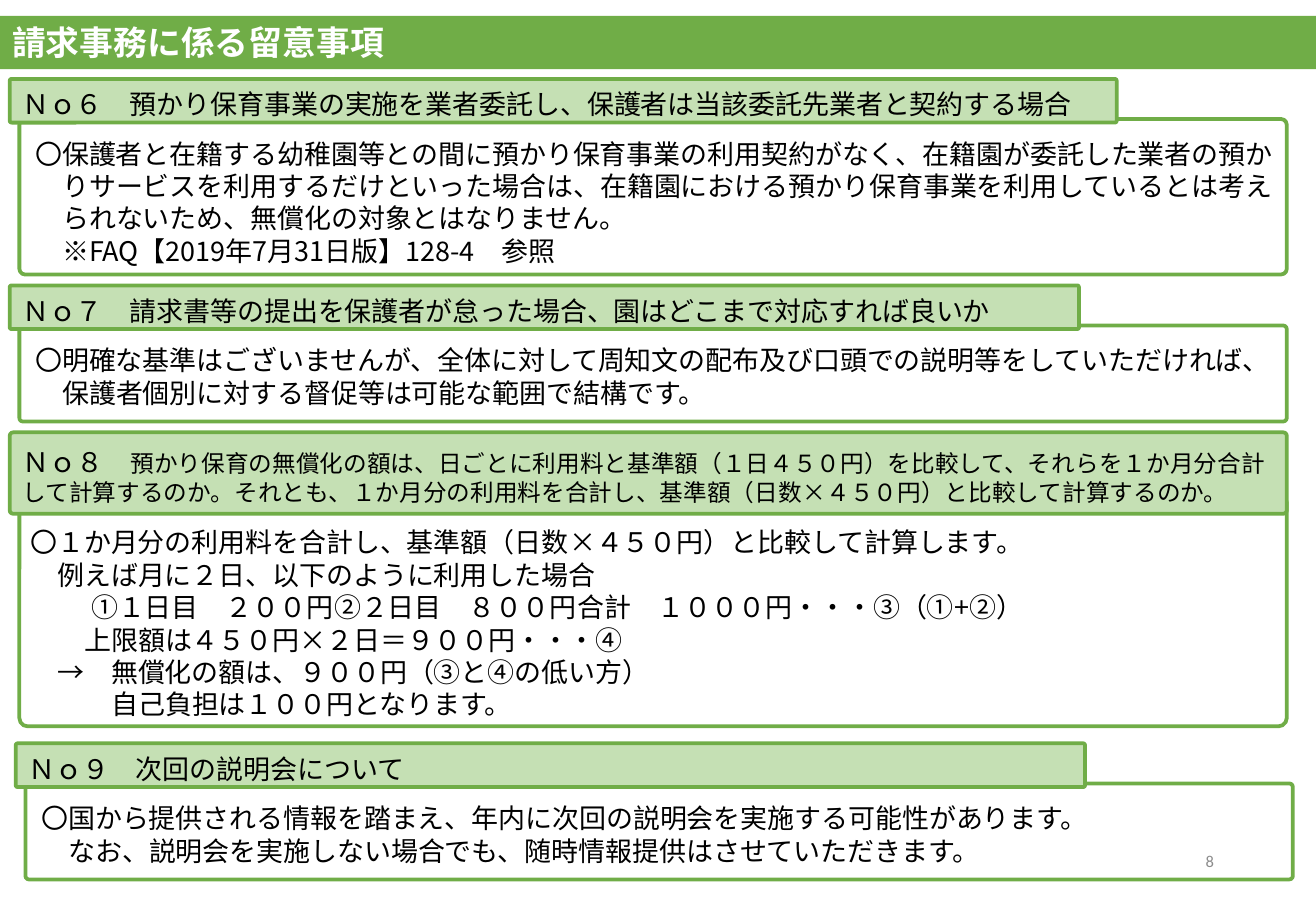
from dataclasses import dataclass

from lxml.etree import SubElement
from pptx import Presentation
from pptx.dml.color import RGBColor
from pptx.enum.shapes import MSO_SHAPE
from pptx.enum.text import MSO_ANCHOR, MSO_AUTO_SIZE, PP_ALIGN
from pptx.oxml.ns import qn
from pptx.util import Inches, Pt

GREEN = RGBColor(0x70, 0xAD, 0x47)
PALE_GREEN = RGBColor(0xC5, 0xE0, 0xB4)
BLACK = RGBColor(0, 0, 0)
WHITE = RGBColor(0xFF, 0xFF, 0xFF)
GREY = RGBColor(0x8C, 0x8C, 0x8C)
JAPANESE_FONT = "Noto Sans CJK JP"
BODY_SIZE = 16
LINE_HEIGHT = 0.27
USAGE_TABS = (0.44, 3.54, 6.2)  # day 1, day 2 and total


@dataclass(frozen=True)
class Line:
    text: str
    indent: int = 0  # in full-width characters
    tabs: tuple[float, ...] = ()


@dataclass(frozen=True)
class Section:
    number: str
    question: str
    left: float
    top: float
    header_width: float
    frame_height: float
    answer: tuple[Line, ...]
    header_height: float = 0.36
    question_size: float = BODY_SIZE
    overlap: float = 0.03
    answer_shift: float = 0.03
    answer_drop: float = 0.1


SECTIONS = (
    Section("Ｎｏ６", "預かり保育事業の実施を業者委託し、保護者は当該委託先業者と契約する場合",
            0.08, 0.65, 9.11, 1.28, (
                Line("〇保護者と在籍する幼稚園等との間に預かり保育事業の利用契約がなく、在籍園が委託した業者の預か"),
                Line("りサービスを利用するだけといった場合は、在籍園における預かり保育事業を利用しているとは考え", 1),
                Line("られないため、無償化の対象とはなりません。", 1),
                Line("※FAQ【2019年7月31日版】128-4　参照", 1))),
    Section("Ｎｏ７", "請求書等の提出を保護者が怠った場合、園はどこまで対応すれば良いか",
            0.08, 2.35, 8.8, 0.79, (
                Line("〇明確な基準はございませんが、全体に対して周知文の配布及び口頭での説明等をしていただければ、"),
                Line("保護者個別に対する督促等は可能な範囲で結構です。", 1))),
    Section("Ｎｏ８", "預かり保育の無償化の額は、日ごとに利用料と基準額（１日４５０円）を比較して、"
            "それらを１か月分合計して計算するのか。それとも、１か月分の利用料を合計し、"
            "基準額（日数×４５０円）と比較して計算するのか。",
            0.08, 3.56, 10.51, 1.91, (
                Line("〇１か月分の利用料を合計し、基準額（日数×４５０円）と比較して計算します。"),
                Line("例えば月に２日、以下のように利用した場合", 1),
                Line("\t①１日目　２００円\t②２日目　８００円\t合計　１０００円・・・③（①+②）",
                     tabs=USAGE_TABS),
                Line("上限額は４５０円×２日＝９００円・・・④", 2),
                Line("→　無償化の額は、９００円（③と④の低い方）", 1),
                Line("自己負担は１００円となります。", 3)),
            header_height=0.67, question_size=14, overlap=0.16,
            answer_shift=-0.01, answer_drop=0.21),
    Section("Ｎｏ９", "次回の説明会について", 0.13, 6.12, 8.8, 0.79, (
        Line("〇国から提供される情報を踏まえ、年内に次回の説明会を実施する可能性があります。"),
        Line("なお、説明会を実施しない場合でも、随時情報提供はさせていただきます。", 1))),
)


def write(paragraph, text: str, *, size: float = BODY_SIZE, color: RGBColor = BLACK,
          bold: bool = False, font: str = JAPANESE_FONT, align=PP_ALIGN.LEFT) -> None:
    paragraph.alignment = align
    run = paragraph.add_run()
    run.text = text
    run.font.size, run.font.bold, run.font.name = Pt(size), bold, font
    run.font.color.rgb = color
    SubElement(run.font._element, qn("a:ea"), typeface=font)


def place(shape, left: float, top: float, width: float, height: float) -> None:
    shape.left, shape.top = Inches(left), Inches(top)
    shape.width, shape.height = Inches(width), Inches(height)


def prepare_frame(shape, anchor):
    frame = shape.text_frame
    frame.word_wrap = True
    frame.auto_size = MSO_AUTO_SIZE.NONE
    frame.vertical_anchor = anchor
    return frame


def add_panel(slide, left: float, top: float, width: float, height: float,
              rounding: float, fill: RGBColor | None = None):
    panel = slide.shapes.add_shape(MSO_SHAPE.ROUNDED_RECTANGLE, Inches(left), Inches(top),
                                   Inches(width), Inches(height))
    panel.adjustments[0] = rounding
    panel.shadow.inherit = False
    panel.line.color.rgb, panel.line.width = GREEN, Pt(2.25)
    if fill is None:
        panel.fill.background()
    else:
        panel.fill.solid()
        panel.fill.fore_color.rgb = fill
    return panel


def write_answer(body, lines: tuple[Line, ...]) -> None:
    frame = prepare_frame(body, MSO_ANCHOR.TOP)
    for index, line in enumerate(lines):
        paragraph = frame.paragraphs[0] if index == 0 else frame.add_paragraph()
        paragraph.space_before = paragraph.space_after = Pt(0)
        paragraph.line_spacing = 1.0
        write(paragraph, line.text)
        # Plain lines without bullets, indented by whole characters
        properties = paragraph._p.get_or_add_pPr()
        properties.set("marL", str(Pt(BODY_SIZE * line.indent)))
        properties.set("indent", "0")
        SubElement(properties, qn("a:buNone"))
        if line.tabs:
            tab_list = SubElement(properties, qn("a:tabLst"))
            for position in line.tabs:
                SubElement(tab_list, qn("a:tab"), pos=str(Inches(position)), algn="l")


def add_section(slide, section: Section, body) -> None:
    frame_left = section.left + 0.08
    frame_top = section.top + section.header_height - section.overlap
    add_panel(slide, frame_left, frame_top, 10.43, section.frame_height, 0.036)

    header = add_panel(slide, section.left, section.top, section.header_width,
                       section.header_height, 0.042, PALE_GREEN)
    frame = prepare_frame(header, MSO_ANCHOR.MIDDLE)
    frame.margin_top, frame.margin_bottom = Inches(0.1), Inches(0.05)
    heading = frame.paragraphs[0]
    write(heading, section.number + "　")
    write(heading, section.question, size=section.question_size)

    place(body, frame_left + section.answer_shift, frame_top + section.answer_drop,
          10.54, 0.1 + LINE_HEIGHT * len(section.answer))
    write_answer(body, section.answer)


def main() -> None:
    presentation = Presentation()
    presentation.slide_width, presentation.slide_height = Inches(10.83), Inches(7.5)
    # The comparison layout offers a title and four bodies
    slide = presentation.slides.add_slide(presentation.slide_layouts[4])

    # Title bar
    title = slide.shapes.title
    place(title, 0, 0.13, 10.83, 0.44)
    title.fill.solid()
    title.fill.fore_color.rgb = GREEN
    write(prepare_frame(title, MSO_ANCHOR.MIDDLE).paragraphs[0],
          "請求事務に係る留意事項", size=20, color=WHITE, bold=True)

    # Questions and answers
    bodies = [holder for holder in slide.placeholders if holder.placeholder_format.idx > 0]
    for section, body in zip(SECTIONS, bodies):
        add_section(slide, section, body)

    # Page number
    page_number = slide.shapes.add_textbox(Inches(7.65), Inches(6.89), Inches(2.44), Inches(0.4))
    write(prepare_frame(page_number, MSO_ANCHOR.MIDDLE).paragraphs[0], "8",
          size=9.8, color=GREY, font="Calibri", align=PP_ALIGN.RIGHT)

    presentation.save("out.pptx")


if __name__ == "__main__":
    main()
